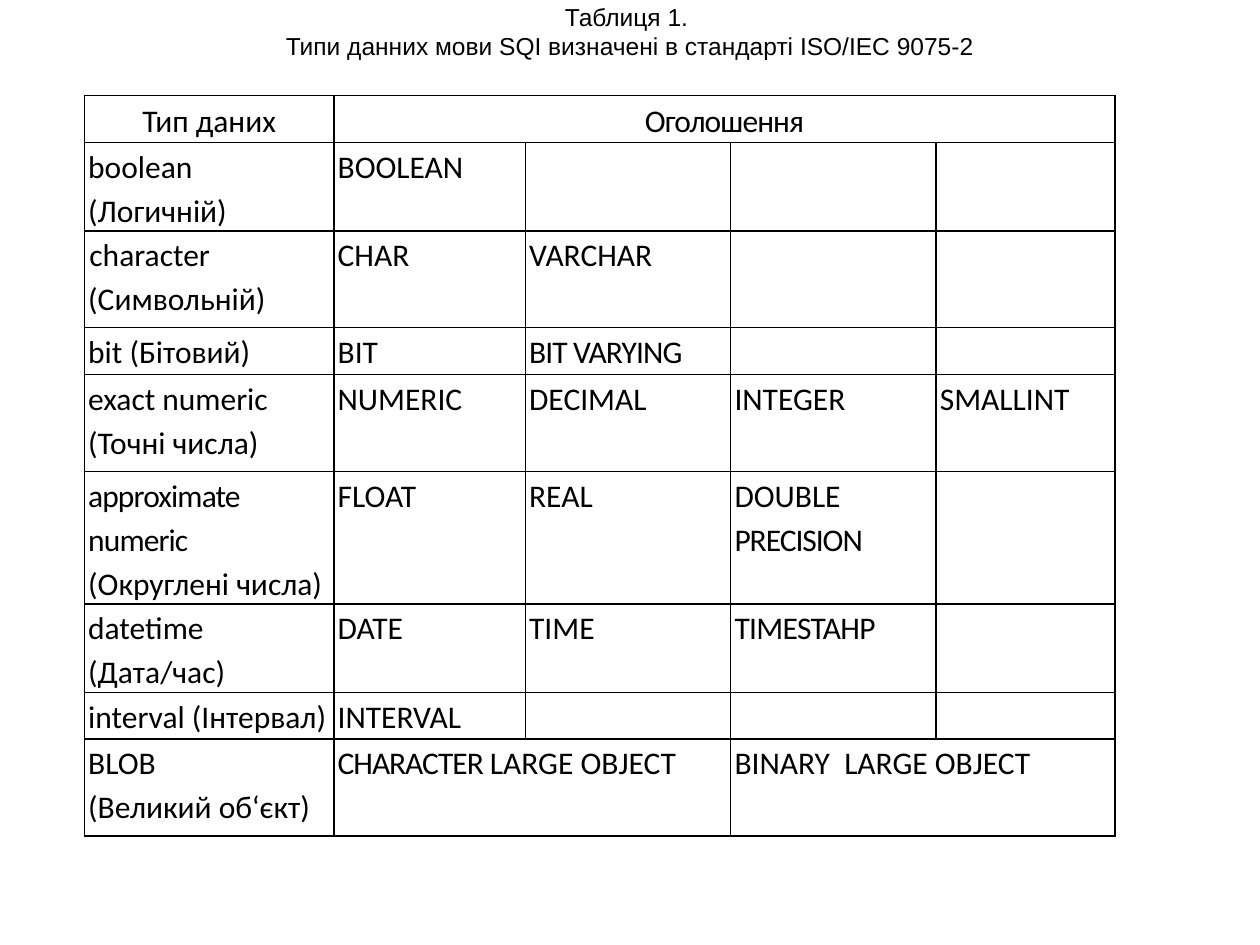
from dataclasses import dataclass

from lxml import etree
from pptx import Presentation
from pptx.dml.color import RGBColor
from pptx.enum import text as txt
from pptx.oxml import ns
from pptx.util import Inches, Pt


@dataclass
class Theme:
    ink: str = "000000"
    head: str = "Arial"
    body: str = "Calibri"
    small: int = 14
    large: int = 18
    line: int = 1
    lead: float = 1.15
    pad: float = 0.03


def write(frame, paras, *, font, size, color, align=None, lead=None, indent=0):
    """Fill a frame; each paragraph is a list of (text, letter spacing) runs."""
    for i, runs in enumerate(paras):
        par = frame.paragraphs[0] if i == 0 else frame.add_paragraph()
        par.alignment = align
        par.line_spacing = lead
        par.font.size = Pt(size)
        if indent:
            par._p.get_or_add_pPr().set("indent", str(Inches(indent)))
        for words, gap in runs:
            run = par.add_run()
            run.text = words
            run.font.name = font
            run.font.size = Pt(size)
            run.font.color.rgb = RGBColor.from_string(color)
            if gap:
                run._r.get_or_add_rPr().set("spc", str(round(gap * 100)))


class Page:
    def __init__(self, slide, theme):
        self.slide = slide
        self.theme = theme

    def title(self, lines, left, top, width, height):
        box = self.slide.shapes.add_textbox(
            Inches(left), Inches(top), Inches(width), Inches(height))
        frame = box.text_frame
        frame.word_wrap = False
        frame.auto_size = txt.MSO_AUTO_SIZE.SHAPE_TO_FIT_TEXT
        frame.vertical_anchor = txt.MSO_ANCHOR.MIDDLE
        write(frame, [[(line, 0)] for line in lines], font=self.theme.head,
              size=self.theme.small, color=self.theme.ink,
              align=txt.PP_ALIGN.CENTER)

    def border(self, cell):
        props = cell._tc.get_or_add_tcPr()
        for side in ("lnL", "lnR", "lnT", "lnB"):
            line = etree.SubElement(props, ns.qn("a:" + side),
                                    w=str(Pt(self.theme.line)))
            fill = etree.SubElement(line, ns.qn("a:solidFill"))
            etree.SubElement(fill, ns.qn("a:srgbClr"), val=self.theme.ink)

    def cell(self, cell, paras, head=False, indent=0):
        cell.margin_left = cell.margin_right = Inches(self.theme.pad)
        cell.margin_top = cell.margin_bottom = 0
        if head:
            cell.vertical_anchor = txt.MSO_ANCHOR.MIDDLE
        self.border(cell)
        cell.fill.background()
        write(cell.text_frame, paras, font=self.theme.body,
              size=self.theme.large, color=self.theme.ink,
              lead=self.theme.lead, indent=indent,
              align=txt.PP_ALIGN.CENTER if head else None)

    def table(self, rows, cols, highs, spans, indents, left, top):
        shape = self.slide.shapes.add_table(
            len(highs), len(cols), Inches(left), Inches(top),
            Inches(sum(cols)), Inches(sum(highs)))
        grid = shape.table
        grid.first_row = grid.horz_banding = False
        for col, wide in zip(grid.columns, cols):
            col.width = Inches(wide)
        for row, high in zip(grid.rows, highs):
            row.height = Inches(high)
        for r, c, last in spans:
            grid.cell(r, c).merge(grid.cell(r, last))
        for r in range(len(highs)):
            for c in range(len(cols)):
                item = rows[r][c] if c < len(rows[r]) else ""
                paras = [[(item, 0)] if item else []] if isinstance(item, str) else item
                self.cell(grid.cell(r, c), paras, head=r == 0,
                          indent=indents.get((r, c), 0))


# Table content: plain text, or paragraphs of spaced runs
ROWS = [
    ["Тип даних", [[("Оголошення", -0.5)]]],
    ["boolean (Логичній)", "BOOLEAN"],
    ["character (Символьній)", "CHAR", "VARCHAR"],
    ["bit (Бітовий)", "BIT", [[("BIT VARYING", -0.5)]]],
    ["exact numeric (Точні числа)", "NUMERIC", "DECIMAL", "INTEGER", "SMALLINT"],
    [[[("approximate numeric ", -0.5), ("(Округлені числа)", 0)]],
     "FLOAT", "REAL", [[("DOUBLE ", 0), ("PRECISION", -0.6)]]],
    ["datetime (Дата/час)", "DATE", "TIME", [[("TIMESTAHP", -0.4)]]],
    ["interval (Інтервал)", "INTERVAL"],
    [[[("BLOB", 0)], [("(Великий об‘єкт)", 0)]],
     [[("CHARACTER ", -0.6), ("LARGE OBJECT", 0)]], "",
     "BINARY  LARGE OBJECT"],
]
COLS = [1.98, 1.52, 1.63, 1.63, 1.42]
ONE, TWO = 0.37, 0.77
HIGHS = [ONE, 0.63, TWO, ONE, TWO, TWO, ONE, ONE, TWO]
SPANS = [(0, 1, 4), (8, 1, 2), (8, 3, 4)]


def main():
    deck = Presentation()
    deck.slide_width, deck.slide_height = Inches(10), Inches(7.5)
    page = Page(deck.slides.add_slide(deck.slide_layouts[6]), Theme())

    # Data types table
    page.table(ROWS, COLS, HIGHS, SPANS, {(2, 0): 0.01}, 0.67, 0.76)

    # Caption
    page.title(["Таблиця 1. ",
                "Типи данних мови SQI визначені в стандарті ISO/IEC 9075-2"],
               0, 0, 10, 0.5)
    deck.save("out.pptx")


if __name__ == "__main__":
    main()
